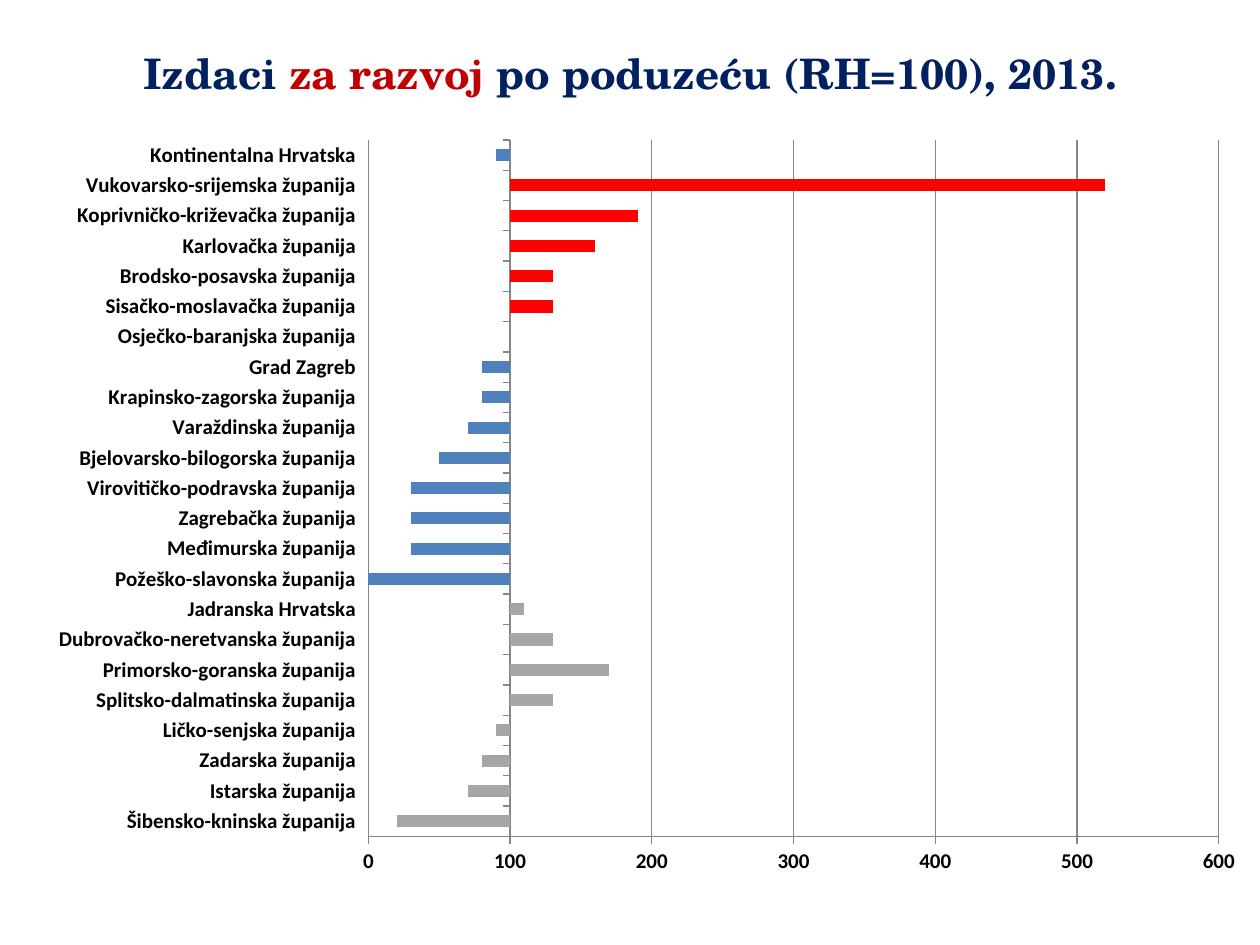
from lxml.etree import SubElement
from pptx import Presentation
from pptx.chart.data import CategoryChartData
from pptx.dml.color import RGBColor
from pptx.enum.chart import XL_CHART_TYPE as ChartType
from pptx.enum.chart import XL_TICK_LABEL_POSITION as LabelPosition
from pptx.enum.chart import XL_TICK_MARK as TickMark
from pptx.enum.text import MSO_ANCHOR as Anchor
from pptx.enum.text import PP_ALIGN as Align
from pptx.oxml.ns import qn
from pptx.util import Pt

COLORS = {
    "white": "FFFFFF",
    "navy": "002060",
    "accent": "C00000",
    "text": "000000",
    "axis": "868686",
    "continental": "4F81BD",
    "adriatic": "A6A6A6",
    "above_average": "FF0000",
}

TITLE_PARTS = [
    ("Izdaci ", "navy"),
    ("za razvoj ", "accent"),
    ("po poduzeću (RH=100), 2013.", "navy"),
]

ADRIATIC = [
    ("Šibensko-kninska županija", 20),
    ("Istarska županija", 70),
    ("Zadarska županija", 80),
    ("Ličko-senjska županija", 90),
    ("Splitsko-dalmatinska županija", 130),
    ("Primorsko-goranska županija", 170),
    ("Dubrovačko-neretvanska županija", 130),
    ("Jadranska Hrvatska", 110),
]

CONTINENTAL = [
    ("Požeško-slavonska županija", 0),
    ("Međimurska županija", 30),
    ("Zagrebačka županija", 30),
    ("Virovitičko-podravska županija", 30),
    ("Bjelovarsko-bilogorska županija", 50),
    ("Varaždinska županija", 70),
    ("Krapinsko-zagorska županija", 80),
    ("Grad Zagreb", 80),
    ("Osječko-baranjska županija", 100),
    ("Sisačko-moslavačka županija", 130),
    ("Brodsko-posavska županija", 130),
    ("Karlovačka županija", 160),
    ("Koprivničko-križevačka županija", 190),
    ("Vukovarsko-srijemska županija", 520),
    ("Kontinentalna Hrvatska", 90),
]

NATIONAL_AVERAGE = 100
CHART_WIDTH, CHART_HEIGHT = 700, 436.5
PLOT_LEFT, PLOT_TOP, PLOT_WIDTH, PLOT_HEIGHT = 190.5, 9, 486, 398


def color(name):
    return RGBColor.from_string(COLORS[name])


def paint(fill, name):
    fill.solid()
    fill.fore_color.rgb = color(name)


def draw_line(line):
    line.color.rgb = color("axis")
    line.width = Pt(0.75)


def add_title(slide):
    title = slide.shapes.title
    title.left, title.top, title.width, title.height = Pt(0), Pt(0), Pt(720), Pt(83)
    paint(title.fill, "white")
    title.text_frame.vertical_anchor = Anchor.MIDDLE
    heading = title.text_frame.paragraphs[0]
    heading.alignment = Align.CENTER
    for wording, color_name in TITLE_PARTS:
        run = heading.add_run()
        run.text = wording
        run.font.name = "TeX Gyre Schola"
        run.font.size = Pt(24)
        run.font.bold = True
        run.font.color.rgb = color(color_name)


def format_axis(axis):
    axis.major_tick_mark = TickMark.OUTSIDE
    axis.minor_tick_mark = TickMark.NONE
    axis.tick_labels.font.size = Pt(12)
    axis.tick_labels.font.bold = True
    draw_line(axis.format.line)


def place_plot(chart):
    plot_area = chart.element.find(".//" + qn("c:plotArea"))
    for old_layout in plot_area.findall(qn("c:layout")):
        plot_area.remove(old_layout)
    layout = SubElement(plot_area, qn("c:layout"))
    plot_area.insert(0, layout)
    manual = SubElement(layout, qn("c:manualLayout"))
    settings = {
        "layoutTarget": "inner",
        "xMode": "edge",
        "yMode": "edge",
        "x": PLOT_LEFT / CHART_WIDTH,
        "y": PLOT_TOP / CHART_HEIGHT,
        "w": PLOT_WIDTH / CHART_WIDTH,
        "h": PLOT_HEIGHT / CHART_HEIGHT,
    }
    for tag, value in settings.items():
        SubElement(manual, qn(f"c:{tag}")).set("val", str(value))


def color_bars(series):
    series.invert_if_negative = False
    paint(series.format.fill, "continental")
    for index, (county, spending) in enumerate(ADRIATIC + CONTINENTAL):
        if index < len(ADRIATIC):
            paint(series.points[index].format.fill, "adriatic")
        elif spending > NATIONAL_AVERAGE:
            paint(series.points[index].format.fill, "above_average")


def add_spending_chart(slide):
    counties, spending = zip(*ADRIATIC, *CONTINENTAL)
    chart_data = CategoryChartData()
    chart_data.categories = counties
    chart_data.add_series("Series 1", spending)
    chart = slide.shapes.add_chart(
        ChartType.BAR_CLUSTERED,
        Pt(20), Pt(71), Pt(CHART_WIDTH), Pt(CHART_HEIGHT),
        chart_data,
    ).chart
    chart.has_title = False
    chart.has_legend = False
    chart.font.name = "Calibri"
    chart.font.size = Pt(9)
    chart.font.color.rgb = color("text")

    format_axis(chart.category_axis)
    chart.category_axis.tick_label_position = LabelPosition.LOW
    chart.category_axis.has_major_gridlines = False

    index_axis = chart.value_axis
    format_axis(index_axis)
    index_axis.minimum_scale = 0
    index_axis.maximum_scale = 600
    index_axis.major_unit = 100
    index_axis.crosses_at = NATIONAL_AVERAGE
    index_axis.has_major_gridlines = True
    draw_line(index_axis.major_gridlines.format.line)

    bars = chart.plots[0]
    bars.gap_width = 150
    bars.vary_by_categories = False
    color_bars(bars.series[0])
    place_plot(chart)


def main():
    presentation = Presentation()
    presentation.slide_width, presentation.slide_height = Pt(720), Pt(540)
    slide = presentation.slides.add_slide(presentation.slide_layouts[5])
    paint(slide.background.fill, "white")
    add_title(slide)
    add_spending_chart(slide)
    presentation.save("out.pptx")


if __name__ == "__main__":
    main()
